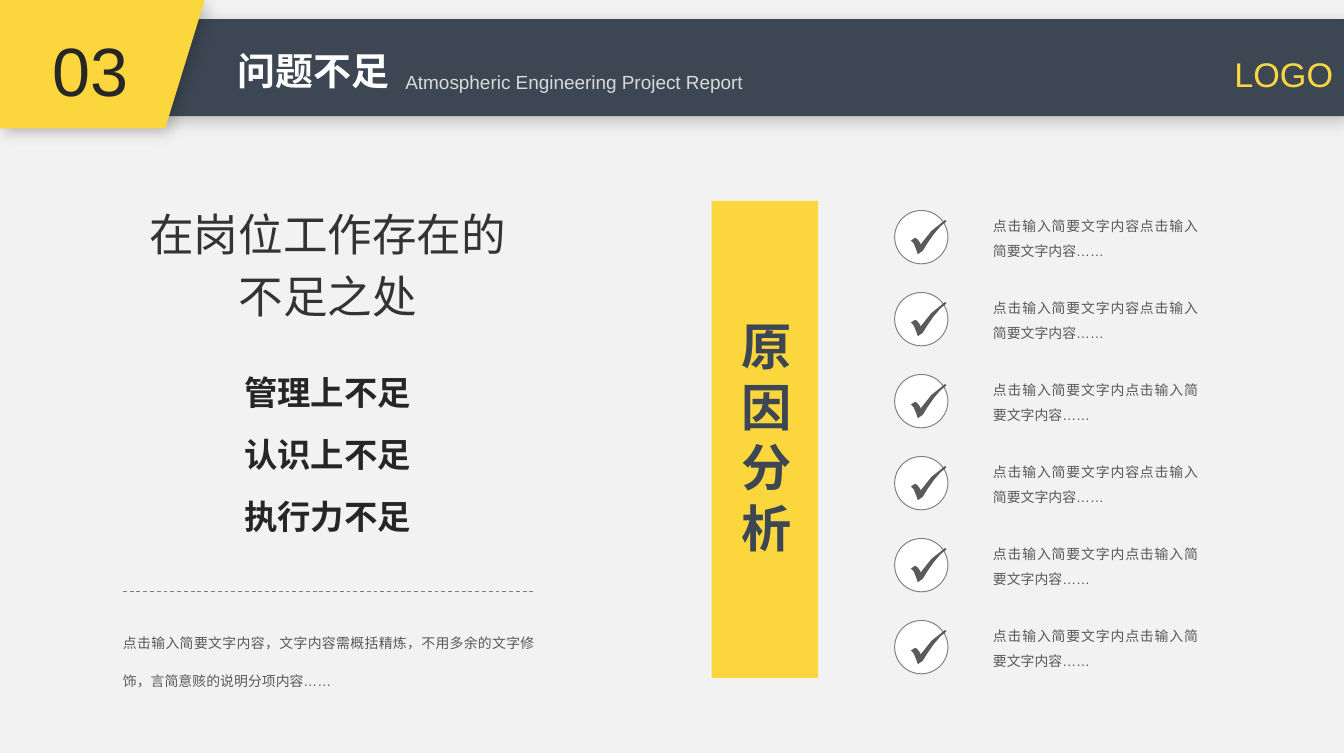
import pptx
import pptx.dml.color
import pptx.enum.dml
import pptx.enum.shapes
import pptx.enum.text
import pptx.oxml
import pptx.oxml.ns
import pptx.util
from pptx.util import Inches

RGBColor = pptx.dml.color.RGBColor
Align = pptx.enum.text.PP_ALIGN
Preset = pptx.enum.shapes.MSO_SHAPE
qn = pptx.oxml.ns.qn

PALE = RGBColor(0xF2, 0xF2, 0xF2)
SLATE = RGBColor(0x3D, 0x47, 0x53)
YELLOW = RGBColor(0xFB, 0xD6, 0x3C)
LOGO_YELLOW = RGBColor(0xF9, 0xD7, 0x40)
WHITE = RGBColor(0xFF, 0xFF, 0xFF)
SILVER = RGBColor(0xD9, 0xD9, 0xD9)
GRAY = RGBColor(0x80, 0x80, 0x80)
TEXT_GRAY = RGBColor(0x59, 0x59, 0x59)
CHECK_GRAY = RGBColor(0x59, 0x5A, 0x59)
CHARCOAL = RGBColor(0x33, 0x33, 0x33)
INK = RGBColor(0x26, 0x26, 0x26)

FONT = "Arial"
NAMESPACE = 'xmlns:a="http://schemas.openxmlformats.org/drawingml/2006/main"'
SHADOW = (
    f'<a:outerShdw {NAMESPACE} blurRad="101600" dist="38100" dir="2700000" '
    'algn="tl" rotWithShape="0"><a:srgbClr val="000000">'
    '<a:alpha val="20000"/></a:srgbClr></a:outerShdw>'
)

SHORTCOMINGS = ["管理上不足", "认识上不足", "执行力不足"]
REASON_LONG = "点击输入简要文字内容点击输入简要文字内容……"
REASON_SHORT = "点击输入简要文字内点击输入简要文字内容……"
REASONS = [REASON_LONG, REASON_LONG, REASON_SHORT,
           REASON_LONG, REASON_SHORT, REASON_SHORT]
REASON_PITCH = 0.6

# Outlines in thousandths of an inch
TAB_OUTLINE = [(0, 0), (1500, 0), (1210, 940), (0, 940)]
CHECK_OUTLINE = [
    (250, 0), (260, 10), (215, 48), (170, 100), (122, 168), (90, 220),
    (80, 230), (50, 250), (40, 220), (20, 170), (0, 150), (30, 130),
    (46, 139), (70, 170), (70, 180), (150, 80),
]


def write_text(shape, lines, *, size, color, bold=False, align=Align.LEFT,
               line_spacing=None, space_after=0, inset=True, wrap=True):
    """Fill the shape with one paragraph per line, all in the same format."""
    frame = shape.text_frame
    frame.text = "\n".join(lines)
    frame.word_wrap = wrap
    frame.auto_size = pptx.enum.text.MSO_AUTO_SIZE.NONE
    frame.vertical_anchor = pptx.enum.text.MSO_ANCHOR.TOP
    frame.margin_left = frame.margin_right = Inches(0.1 if inset else 0)
    frame.margin_top = frame.margin_bottom = Inches(0.05 if inset else 0)
    for paragraph in frame.paragraphs:
        paragraph.alignment = align
        paragraph.line_spacing = line_spacing
        paragraph.space_before = pptx.util.Pt(0)
        paragraph.space_after = pptx.util.Pt(space_after)
        for run in paragraph.runs:
            run.font.name = FONT
            run.font.size = pptx.util.Pt(size)
            run.font.bold = bold
            run.font.color.rgb = color
            run.font._element.append(pptx.oxml.parse_xml(
                f'<a:ea {NAMESPACE} typeface="{FONT}"/>'))


def add_text(slide, box, *lines, **text_format):
    shape = slide.shapes.add_textbox(*map(Inches, box))
    write_text(shape, lines, **text_format)


def move_to_front(placeholder, box):
    placeholder.left, placeholder.top, placeholder.width, placeholder.height = map(
        Inches, box)
    placeholder.element.getparent().append(placeholder.element)


def paint(shape, fill, line=None, shadow=False):
    shape.fill.solid()
    shape.fill.fore_color.rgb = fill
    if line is None:
        shape.line.fill.background()
    else:
        shape.line.color.rgb = line
        shape.line.width = pptx.util.Pt(0.5)
    shape.shadow.inherit = False
    if shadow:
        effects = shape.element.spPr.find(qn("a:effectLst"))
        effects.append(pptx.oxml.parse_xml(SHADOW))


def add_preset(shapes, preset, box, fill, **style):
    paint(shapes.add_shape(preset, *map(Inches, box)), fill, **style)


def add_outline(shapes, points, left, top, fill, **style):
    builder = shapes.build_freeform(*points[0], scale=Inches(0.001))
    builder.add_line_segments(points[1:], close=True)
    paint(builder.convert_to_shape(Inches(left), Inches(top)), fill, **style)


def add_dashed_line(slide, left, right, y):
    connector = slide.shapes.add_connector(
        pptx.enum.shapes.MSO_CONNECTOR.STRAIGHT,
        Inches(left), Inches(y), Inches(right), Inches(y))
    connector.line.color.rgb = GRAY
    connector.line.width = pptx.util.Pt(0.5)
    connector.line.dash_style = pptx.enum.dml.MSO_LINE.DASH
    connector.element.spPr.append(
        pptx.oxml.parse_xml(f"<a:effectLst {NAMESPACE}/>"))


def add_header(slide):
    add_preset(slide.shapes, Preset.RECTANGLE, (0, 0.14, 9.84, 0.71), SLATE,
               shadow=True)
    add_outline(slide.shapes, TAB_OUTLINE, 0, 0, YELLOW, shadow=True)
    add_text(slide, (8.94, 0.34, 0.93, 0.4), "LOGO",
             size=18, color=LOGO_YELLOW, wrap=False)
    title = slide.shapes.title
    move_to_front(title, (1.64, 0.3, 1.32, 0.44))
    write_text(title, ["问题不足"], size=20, color=WHITE, bold=True, wrap=False)
    add_text(slide, (2.87, 0.47, 2.76, 0.28),
             "Atmospheric Engineering Project Report", size=10, color=SILVER)
    add_text(slide, (0.28, 0.16, 0.76, 0.71), "03",
             size=36, color=INK, align=Align.CENTER, wrap=False)


def add_shortcomings(slide):
    add_text(slide, (0.88, 1.46, 3.04, 0.9), "在岗位工作存在的", "不足之处",
             size=23.5, color=CHARCOAL, align=Align.CENTER,
             line_spacing=pptx.util.Pt(32.3), inset=False)
    body = slide.placeholders[1]
    move_to_front(body, (1.55, 2.72, 1.7, 1.21))
    write_text(body, SHORTCOMINGS, size=17.6, color=INK, bold=True,
               align=Align.CENTER, space_after=11.7, inset=False)
    for paragraph in body.text_frame.paragraphs:
        properties = paragraph._p.get_or_add_pPr()
        properties.set("marL", "0")
        properties.set("indent", "0")
        properties.append(pptx.oxml.parse_xml(f"<a:buNone {NAMESPACE}/>"))
    add_dashed_line(slide, 0.9, 3.91, 4.33)
    add_text(slide, (0.9, 4.49, 3.01, 0.52),
             "点击输入简要文字内容，文字内容需概括精炼，不用多余的文字修饰，"
             "言简意赅的说明分项内容……",
             size=7.3, color=TEXT_GRAY, align=Align.JUSTIFY,
             line_spacing=pptx.util.Pt(20), inset=False)


def add_reason(slide, text, top):
    """Add a check mark in a circle with its explanation beside it."""
    badge = slide.shapes.add_group_shape()
    add_preset(badge.shapes, Preset.OVAL, (6.55, top, 0.39, 0.39), WHITE, line=GRAY)
    add_outline(badge.shapes, CHECK_OUTLINE, 6.67, top + 0.07, CHECK_GRAY)
    add_text(slide, (7.27, top - 0.01, 1.5, 0.35), text,
             size=7.3, color=TEXT_GRAY, align=Align.JUSTIFY,
             line_spacing=1.5, inset=False)


def add_analysis(slide):
    add_preset(slide.shapes, Preset.RECTANGLE, (5.21, 1.47, 0.78, 3.49), YELLOW)
    add_text(slide, (5.4, 2.31, 0.42, 1.78), "原因分析", size=26.5, color=SLATE,
             bold=True, align=Align.CENTER, inset=False)
    for index, reason in enumerate(REASONS):
        add_reason(slide, reason, 1.54 + index * REASON_PITCH)


def main():
    presentation = pptx.Presentation()
    presentation.slide_width = Inches(9.84)
    presentation.slide_height = Inches(5.51)
    slide = presentation.slides.add_slide(presentation.slide_layouts[1])
    slide.background.fill.solid()
    slide.background.fill.fore_color.rgb = PALE
    add_header(slide)
    add_shortcomings(slide)
    add_analysis(slide)
    presentation.save("out.pptx")


if __name__ == "__main__":
    main()
